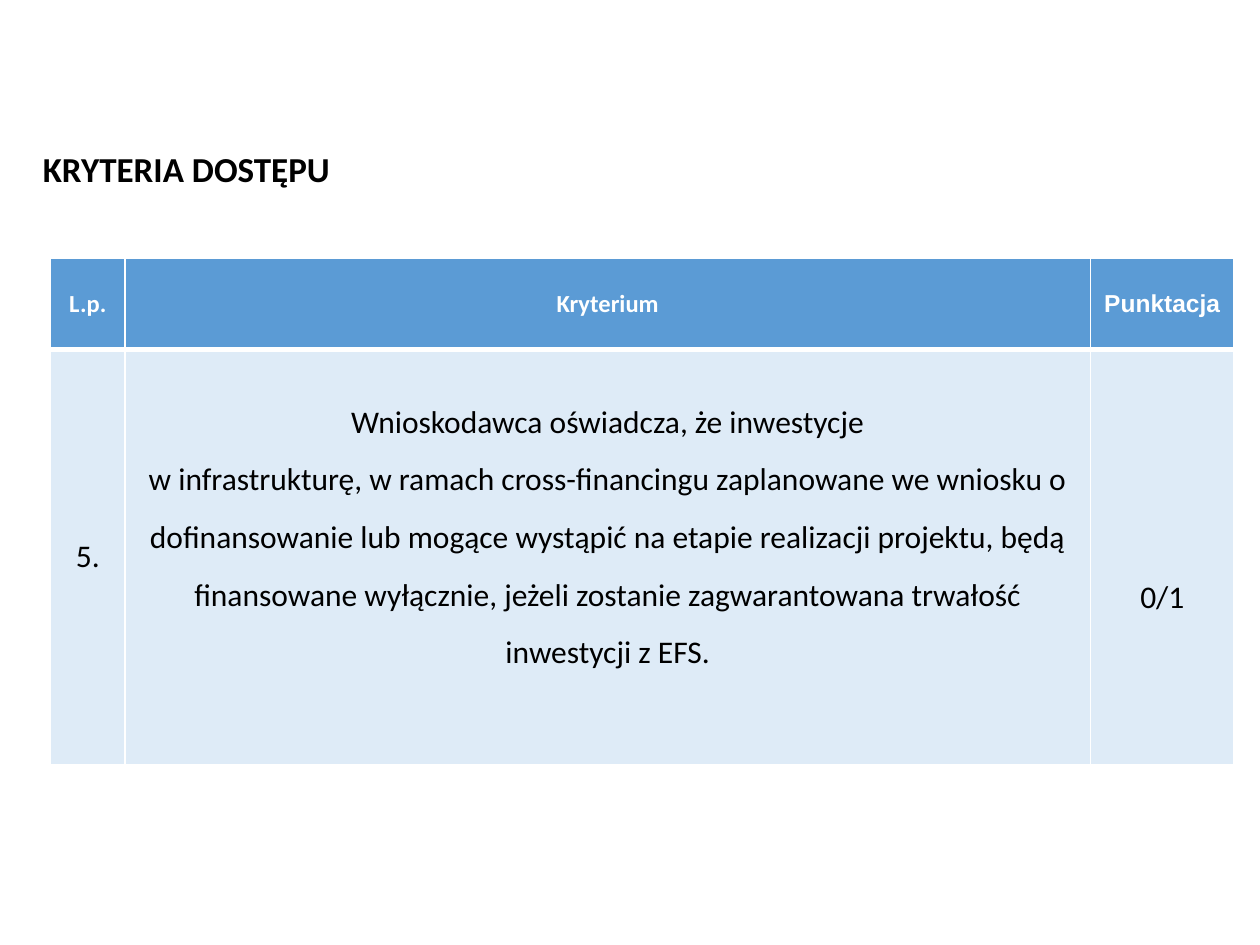
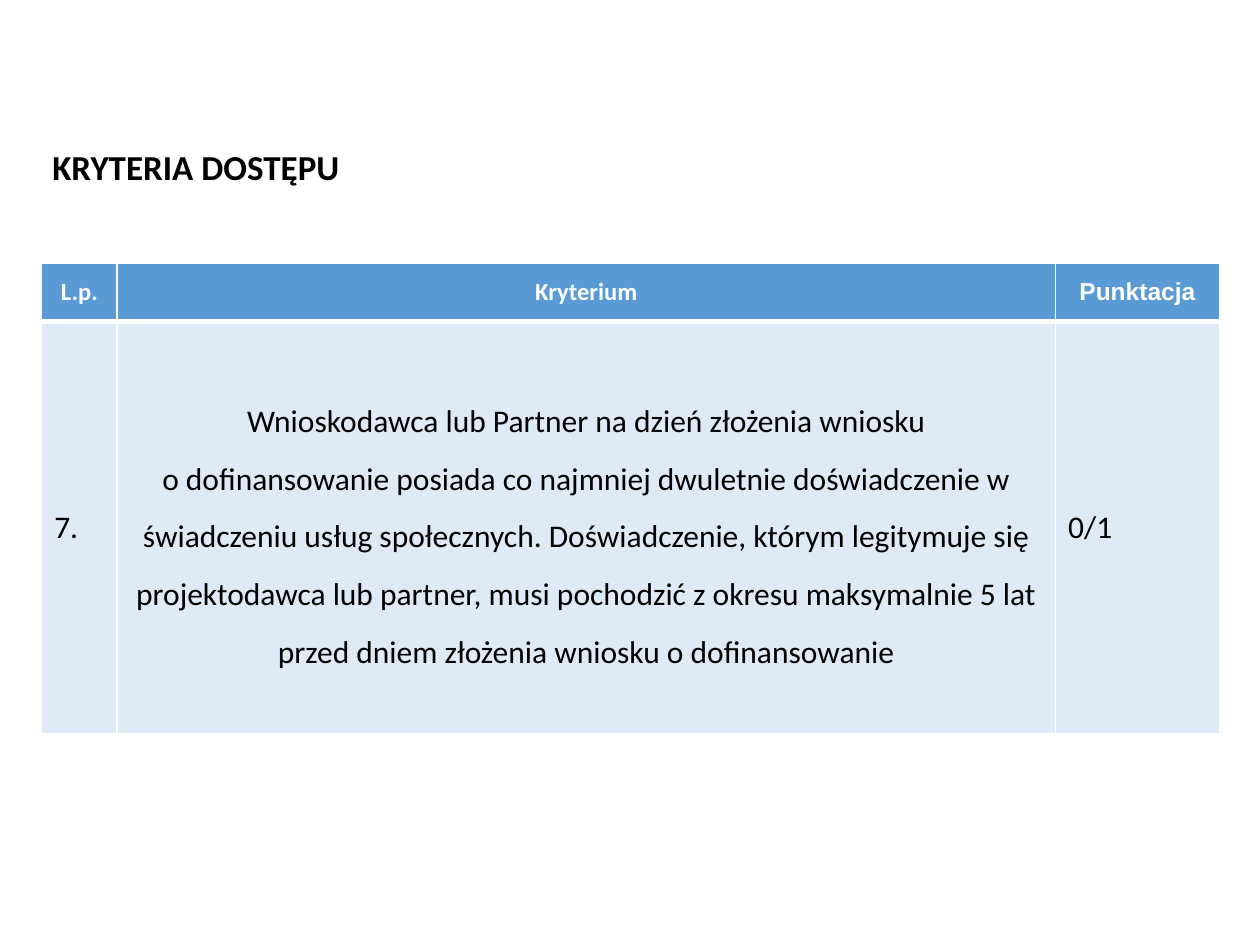
from lxml import etree
from pptx import Presentation
from pptx import util as u
from pptx.dml.color import RGBColor
from pptx.enum import text
from pptx.oxml.ns import qn

COLORS = {"header": "5B9BD5", "body": "DEEBF7", "white": "FFFFFF", "black": "000000"}
HEADINGS = ["L.p.", "Kryterium", "Punktacja"]
CENTER, LEFT = text.PP_ALIGN.CENTER, text.PP_ALIGN.LEFT

CRITERIA = [
    {
        "title_at": (0.61, 2.84),
        "table_at": (1.02, 5.21),
        "columns": [1.5, 19.46, 2.9],
        "rows": [1.83, 8.38],
        "side_alignment": CENTER,
        "criterion_bottom": 1.3,
        "score_top": 1.77,
        "entries": [
            "5.",
            "Wnioskodawca oświadcza, że inwestycje\n"
            "w infrastrukturę, w ramach cross-financingu zaplanowane we wniosku o "
            "dofinansowanie lub mogące wystąpić na etapie realizacji projektu, będą "
            "finansowane wyłącznie, jeżeli zostanie zagwarantowana trwałość "
            "inwestycji z EFS.",
            "0/1",
        ],
    },
    {
        "title_at": (0.8, 2.79),
        "table_at": (0.84, 5.31),
        "columns": [1.52, 18.92, 3.3],
        "rows": [1.17, 8.31],
        "side_alignment": LEFT,
        "criterion_bottom": 0.13,
        "score_top": 0.13,
        "entries": [
            "7.",
            "Wnioskodawca lub Partner na dzień złożenia wniosku\n"
            "o dofinansowanie posiada co najmniej dwuletnie doświadczenie w "
            "świadczeniu usług społecznych. Doświadczenie, którym legitymuje się "
            "projektodawca lub partner, musi pochodzić z okresu maksymalnie 5 lat "
            "przed dniem złożenia wniosku o dofinansowanie",
            "0/1",
        ],
    },
]


def style_paragraph(paragraph, size, color, bold, alignment, name="Calibri"):
    paragraph.alignment = alignment
    paragraph.font.size = u.Pt(size)
    paragraph.font.name = name
    paragraph.font.bold = bold
    paragraph.font.color.rgb = RGBColor.from_string(COLORS[color])


def style_cell(cell, fill, borders):
    cell.vertical_anchor = text.MSO_ANCHOR.MIDDLE
    properties = cell._tc.get_or_add_tcPr()
    for side, width in borders.items():
        line = etree.SubElement(properties, qn(f"a:{side}"), w=str(u.Pt(width)))
        solid = etree.SubElement(line, qn("a:solidFill"))
        etree.SubElement(solid, qn("a:srgbClr"), val=COLORS["white"])
    cell.fill.solid()
    cell.fill.fore_color.rgb = RGBColor.from_string(COLORS[fill])


presentation = Presentation()
presentation.slide_width = u.Cm(25.4)
presentation.slide_height = u.Cm(19.05)

for criterion in CRITERIA:
    slide = presentation.slides.add_slide(presentation.slide_layouts[5])

    title = slide.shapes.title
    title.left, title.top = [u.Cm(value) for value in criterion["title_at"]]
    title.width, title.height = u.Cm(9.4), u.Cm(1.12)
    title.text_frame.text = "KRYTERIA DOSTĘPU"
    title.text_frame.auto_size = text.MSO_AUTO_SIZE.NONE
    title.text_frame.vertical_anchor = text.MSO_ANCHOR.MIDDLE
    style_paragraph(title.text_frame.paragraphs[0], 20, "black", True, LEFT)

    left, top = criterion["table_at"]
    columns, rows = criterion["columns"], criterion["rows"]
    table = slide.shapes.add_table(
        2, 3, u.Cm(left), u.Cm(top), u.Cm(sum(columns)), u.Cm(sum(rows))
    ).table
    for column, width in zip(table.columns, columns):
        column.width = u.Cm(width)
    for row, height in zip(table.rows, rows):
        row.height = u.Cm(height)

    for index, heading in enumerate(HEADINGS):
        cell = table.cell(0, index)
        cell.text = heading
        style_cell(cell, "header", {"lnL": 1, "lnR": 1, "lnT": 1, "lnB": 3})
        font_name = "Arial" if heading == "Punktacja" else "Calibri"
        style_paragraph(cell.text_frame.paragraphs[0], 14, "white", True, CENTER, font_name)

    for index, entry in enumerate(criterion["entries"]):
        cell = table.cell(1, index)
        cell.text = entry
        style_cell(cell, "body", {"lnL": 1, "lnR": 1, "lnT": 3, "lnB": 1})
        is_criterion = index == 1
        for paragraph in cell.text_frame.paragraphs:
            alignment = CENTER if is_criterion else criterion["side_alignment"]
            style_paragraph(paragraph, 18, "black", False, alignment)
            if is_criterion:
                paragraph.line_spacing = 1.5
    table.cell(1, 1).margin_bottom = u.Cm(criterion["criterion_bottom"])
    table.cell(1, 2).margin_top = u.Cm(criterion["score_top"])

presentation.save("out.pptx")
